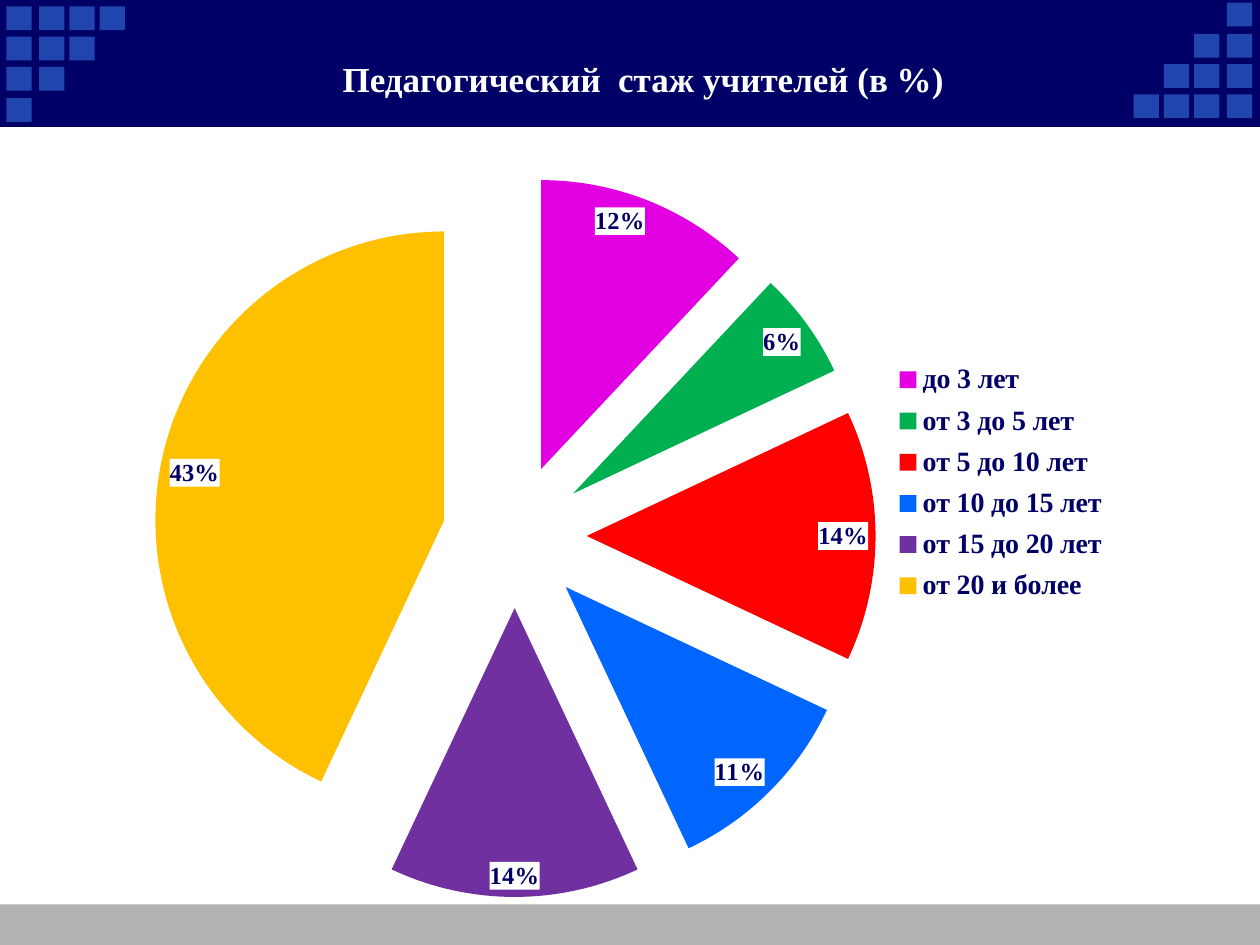
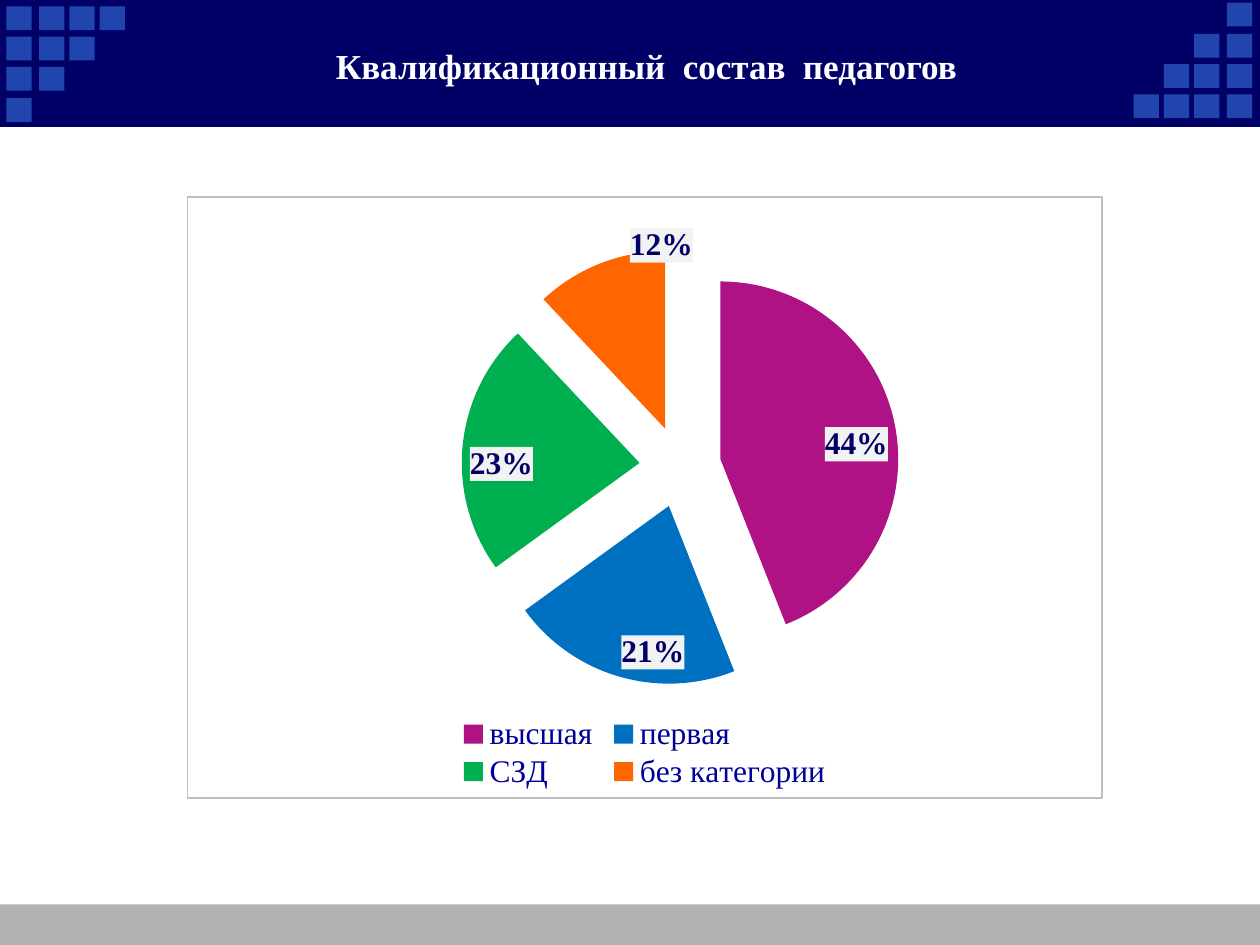
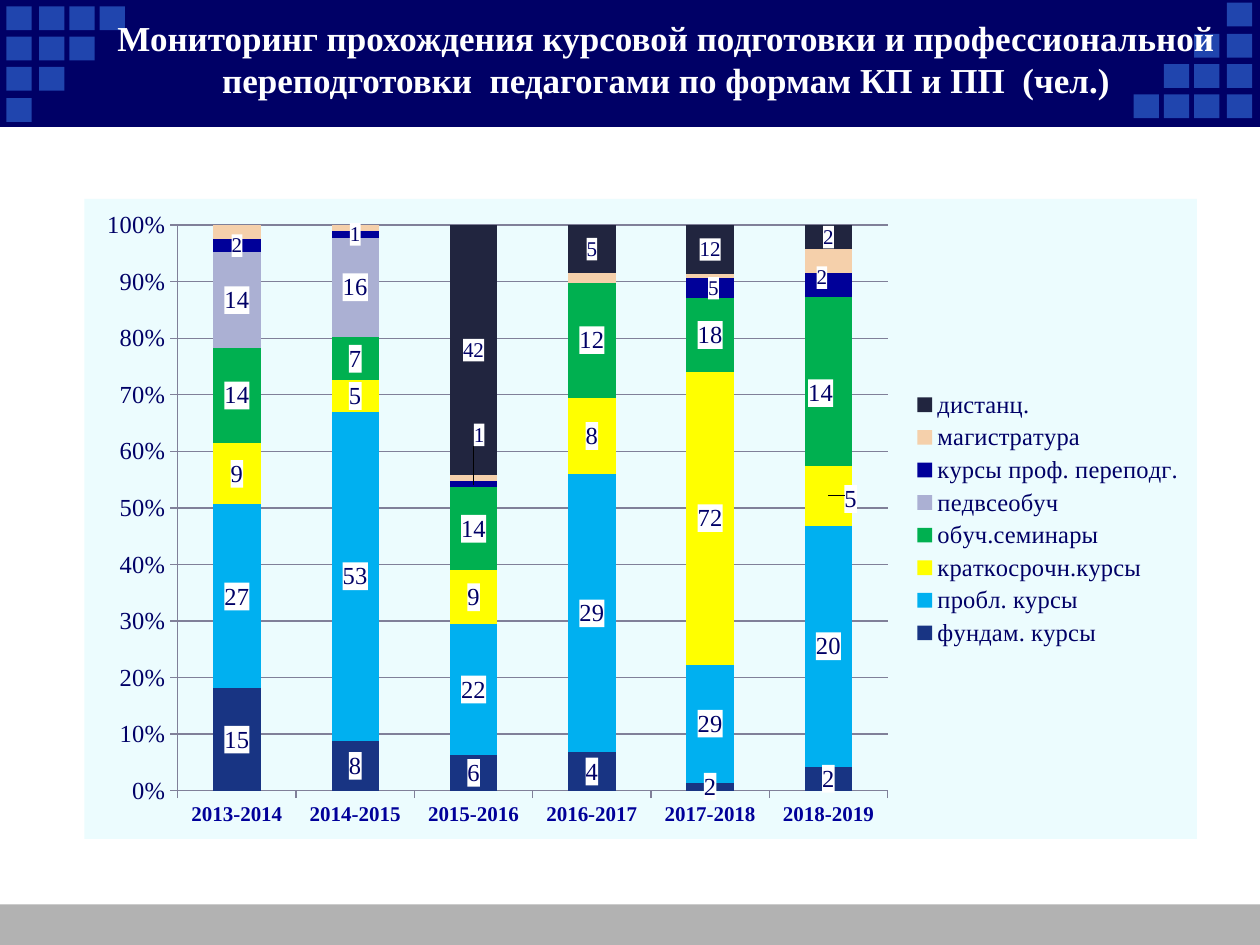
from copy import deepcopy

from pptx import Presentation
from pptx.chart.data import CategoryChartData
from pptx.dml.color import RGBColor
from pptx.enum.chart import XL_CHART_TYPE, XL_LABEL_POSITION, XL_LEGEND_POSITION, XL_TICK_MARK
from pptx.enum.shapes import MSO_SHAPE
from pptx.enum.text import MSO_ANCHOR, PP_ALIGN
from pptx.oxml import parse_xml
from pptx.oxml.ns import nsdecls, qn
from pptx.util import Cm, Pt

WIDE, HIGH = 25.4, 19.05
NAVY, BLUE, GREY, WHITE = "000066", "2045AE", "B2B2B2", "FFFFFF"
INK = "000099"
SERIF = "Times New Roman"
COLS = (0.13, 0.79, 1.4, 2.01)
ROWS = (0.13, 0.74, 1.35, 1.98)
TILE = (0.51, 0.48)
CORNER = (2.64, 2.51)


def tint(code):
    return RGBColor.from_string(code)


def put(item, vals):
    for key, val in vals.items():
        setattr(item, key, val)


def style(font, size, color=NAVY, bold=False):
    put(font, {"name": SERIF, "size": Pt(size), "bold": bold})
    font.color.rgb = tint(color)


def block(shapes, box, color):
    shape = shapes.add_shape(MSO_SHAPE.RECTANGLE, *map(Cm, box))
    shape.shadow.inherit = False
    shape.fill.solid()
    shape.fill.fore_color.rgb = tint(color)
    shape.line.fill.background()
    return shape


def corner(slide, left, top, turn):
    group = slide.shapes.add_group_shape()
    for row, y in enumerate(ROWS):
        for x in COLS[:len(COLS) - row]:
            if turn:
                spot = (CORNER[0] - x - TILE[0], CORNER[1] - y - TILE[1])
            else:
                spot = (x, y)
            tile = block(group.shapes, (left + spot[0], top + spot[1], *TILE), BLUE)
            tile.rotation = 180 if turn else 0


def frame(slide):
    block(slide.shapes, (0, 18.23, WIDE, 0.83), GREY)
    band = block(slide.shapes, (0, 0, WIDE, 2.54), NAVY)
    band.line.color.rgb = tint(NAVY)
    band.line.width = Pt(0.75)
    corner(slide, 0, 0, False)
    corner(slide, 22.73, 0, True)


def title(slide, box, text, **extra):
    area = slide.shapes.add_textbox(*map(Cm, box)).text_frame
    put(area, {"word_wrap": True, "vertical_anchor": MSO_ANCHOR.MIDDLE, **extra})
    para = area.paragraphs[0]
    para.alignment = PP_ALIGN.CENTER
    run = para.add_run()
    run.text = text
    style(run.font, 20, WHITE, True)


def paint(fill, line=None):
    def solid(code):
        return f'<a:solidFill><a:srgbClr val="{code}"/></a:solidFill>' if code else "<a:noFill/>"

    return parse_xml(f'<c:spPr {nsdecls("c", "a")}>{solid(fill)}'
                     f'<a:ln w="9525">{solid(line)}</a:ln></c:spPr>')


def layout(spot, inner=False):
    parts = '<c:layoutTarget val="inner"/>' if inner else ""
    if len(spot) == 4:
        parts += '<c:xMode val="edge"/><c:yMode val="edge"/>'
    parts += "".join(f'<c:{key} val="{val}"/>' for key, val in zip("xywh", spot))
    return parse_xml(f'<c:layout {nsdecls("c")}><c:manualLayout>{parts}</c:manualLayout></c:layout>')


def chart_on(slide, box, kind, cats, rows, fmt, plot):
    data = CategoryChartData(number_format=fmt)
    data.categories = cats
    for name, vals in rows:
        data.add_series(name, vals)
    chart = slide.shapes.add_chart(kind, *map(Cm, box), data).chart
    chart.has_title = False
    style(chart.font, 14)
    area = chart.element.xpath("c:chart/c:plotArea")[0]
    for old in area.findall(qn("c:layout")):
        area.remove(old)
    area.insert(0, layout(plot, True))
    return chart


def back(chart, fill, line=None):
    chart.element.find(qn("c:chart")).addnext(paint(fill, line))


def legend(chart, side, size, color=NAVY, bold=False, spot=None):
    chart.has_legend = True
    put(chart.legend, {"position": side, "include_in_layout": False})
    style(chart.legend.font, size, color, bold)
    if spot:
        node = chart.element.xpath("c:chart/c:legend")[0]
        for old in node.findall(qn("c:layout")):
            node.remove(old)
        node.find(qn("c:legendPos")).addnext(layout(spot))


def labels(series, size, fill, moves=None, bold=False, **vals):
    marks = series.data_labels
    style(marks.font, size, NAVY, bold)
    put(marks, {"show_value": True, **vals})
    node = series.data_labels._element
    node.find(qn("c:txPr")).addprevious(paint(fill))
    parts = [part for part in node if part.tag != qn("c:showLeaderLines")]
    for at, (index, move) in enumerate((moves or {}).items()):
        label = parse_xml(f'<c:dLbl {nsdecls("c")}><c:idx val="{index}"/></c:dLbl>')
        label.append(layout(move))
        label.extend(deepcopy(part) for part in parts)
        node.insert(at, label)


def pie(slide, box, slices, burst, plot, fmt="General"):
    cats, vals, colors = zip(*slices)
    chart = chart_on(slide, box, XL_CHART_TYPE.PIE, cats, [("Series 1", vals)], fmt, plot)
    chart.plots[0].vary_by_categories = True
    series = chart.plots[0].series[0]
    for index, color in enumerate(colors):
        fill = series.points[index].format.fill
        fill.solid()
        fill.fore_color.rgb = tint(color)
    series._element.find(qn("c:tx")).addnext(
        parse_xml(f'<c:explosion {nsdecls("c")} val="{burst}"/>'))
    return chart, series


def tenure(slide):
    slices = [
        ("до 3 лет", 12, "E200E2"),
        ("от 3 до 5 лет", 6, "00B050"),
        ("от 5 до 10 лет", 14, "FF0000"),
        ("от 10 до 15 лет", 11, "0066FF"),
        ("от 15 до 20 лет", 14, "7030A0"),
        ("от 20 и более", 43, "FFC000"),
    ]
    title(slide, (3.38, 0.84, 19.18, 1.47), "Педагогический  стаж учителей (в %)")
    chart, series = pie(slide, (2.34, 3.18, 20.98, 15.24), slices, 25, (0.036, 0.023, 0.694, 0.955))
    legend(chart, XL_LEGEND_POSITION.RIGHT, 16, bold=True, spot=(0.74, 0.26, 0.22, 0.34))
    labels(series, 14, WHITE, bold=True, show_value=False, show_percentage=True,
           number_format="0%", number_format_is_linked=False,
           position=XL_LABEL_POSITION.INSIDE_END)


def grades(slide):
    slices = [
        ("высшая", 0.44, "AE1285"),
        ("первая", 0.21, "0070C0"),
        ("СЗД", 0.23, "00B050"),
        ("без категории", 0.12, "FF6600"),
    ]
    chart, series = pie(slide, (3.76, 3.96, 18.47, 12.14), slices, 23, (0.3, 0.085, 0.478, 0.728), "0%")
    back(chart, None, "BFBFBF")
    legend(chart, XL_LEGEND_POSITION.BOTTOM, 18, INK, spot=(0.29, 0.86, 0.42, 0.13))
    labels(series, 18, "F2F2F2", {3: (0.03, -0.07)}, True, number_format="0%",
           number_format_is_linked=False, position=XL_LABEL_POSITION.INSIDE_END)
    title(slide, (2.24, 0.64, 21.59, 2.11), "Квалификационный  состав  педагогов",
          vertical_anchor=MSO_ANCHOR.TOP, margin_top=Cm(0.25))


def axes(chart):
    base, scale = chart.category_axis, chart.value_axis
    style(base.tick_labels.font, 12, INK, True)
    style(scale.tick_labels.font, 14)
    put(scale.tick_labels, {"number_format": "0%", "number_format_is_linked": False})
    put(scale, {"maximum_scale": 1, "major_unit": 0.1, "has_major_gridlines": True})
    for axis in (base, scale):
        axis.major_tick_mark = XL_TICK_MARK.OUTSIDE
    for item in (base, scale, scale.major_gridlines):
        item.format.line.color.rgb = tint("808099")
        item.format.line.width = Pt(0.75)


def courses(slide):
    years = [f"{year}-{year + 1}" for year in range(2013, 2019)]
    rows = [
        ("фундам. курсы", (15, 8, 6, 4, 2, 2), "183483", 14, {}),
        ("пробл. курсы", (27, 53, 22, 29, 29, 20), "00B0F0", 14, {}),
        ("краткосрочн.курсы", (9, 5, 9, 8, 72, 5), "FFFF00", 14, {5: (0.02, 0.005)}),
        ("обуч.семинары", (14, 7, 14, 12, 18, 14), "00B050", 14, {5: (-0.007, 0.018)}),
        ("педвсеобуч", (14, 16, None, None, None, None), "ABB0D3", 14, {}),
        ("курсы проф. переподг.", (2, 1, 1, None, 5, 2), INK, 12,
         {2: (0.005, -0.077), 4: (0.003, 0), 5: (-0.006, -0.012)}),
        ("магистратура", (2, 1, 1, 1, 1, 2), "F5D0AB", None, {}),
        ("дистанц.", (None, None, 42, 5, 12, 2), "21253F", 12, {}),
    ]
    title(slide, (1.9, 0.2, 23.06, 1.96),
          "Мониторинг прохождения курсовой подготовки и профессиональной "
          "переподготовки  педагогами по формам КП и ПП  (чел.)")
    chart = chart_on(slide, (1.7, 4.01, 22.43, 12.9), XL_CHART_TYPE.COLUMN_STACKED_100,
                     years, [row[:2] for row in rows], "General", (0.084, 0.041, 0.638, 0.884))
    back(chart, "ECFCFE")
    put(chart.plots[0], {"gap_width": 150, "overlap": 100, "vary_by_categories": False})
    axes(chart)
    legend(chart, XL_LEGEND_POSITION.RIGHT, 14)
    for series, (_, _, color, size, moves) in zip(chart.plots[0].series, rows):
        series.format.fill.solid()
        series.format.fill.fore_color.rgb = tint(color)
        if size:
            labels(series, size, WHITE, moves)


def main():
    deck = Presentation()
    put(deck, {"slide_width": Cm(WIDE), "slide_height": Cm(HIGH)})
    for build in (tenure, grades, courses):
        slide = deck.slides.add_slide(deck.slide_layouts[6])
        frame(slide)
        build(slide)
    deck.save("out.pptx")


if __name__ == "__main__":
    main()
